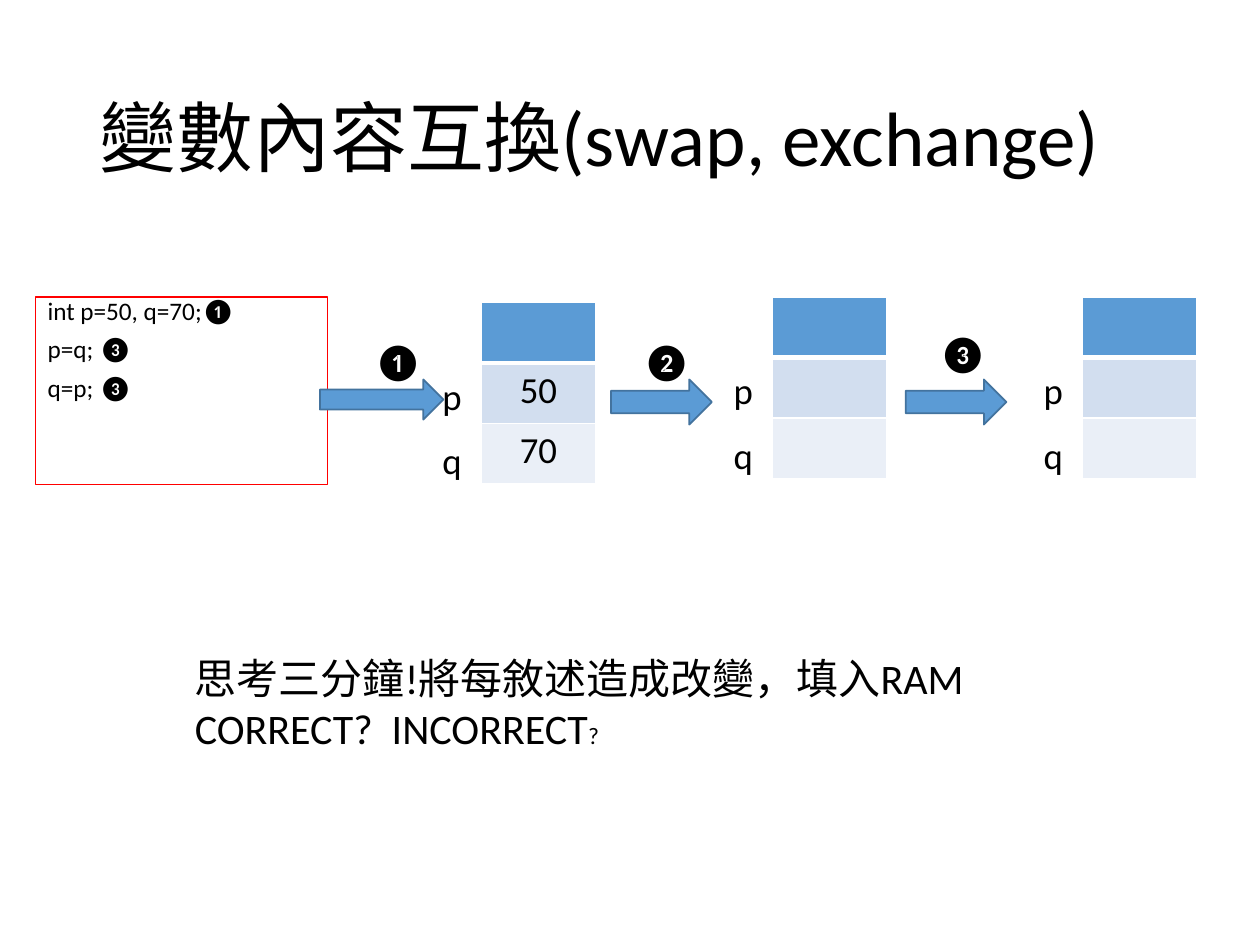
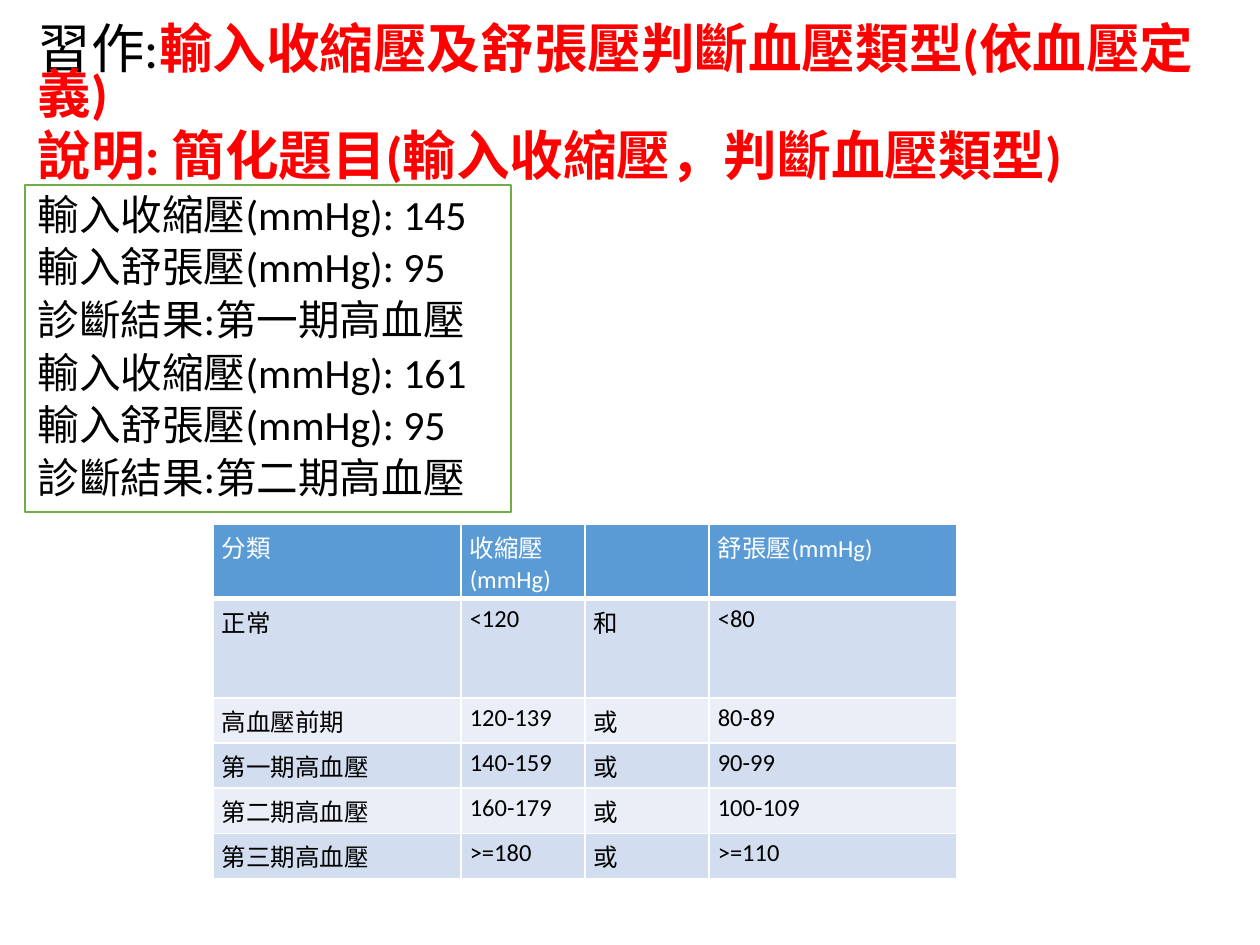
from lxml.etree import SubElement
from pptx import Presentation
from pptx.dml.color import RGBColor
from pptx.enum.shapes import MSO_SHAPE as Shape
from pptx.enum.text import MSO_ANCHOR as Anchor, PP_ALIGN as Align
from pptx.oxml.ns import qn
from pptx.util import Cm, Pt

BLACK, WHITE, RED, GREEN = "000000", "FFFFFF", "FF0000", "70AD47"
BLUE, DARK_BLUE = "5B9BD5", "43739E"
BANDS = ("D2DEEF", "EAEFF7")


def color(value):
    """Turn a hex string into a colour."""
    return RGBColor.from_string(value)


def lengths(box):
    """Turn centimetres into lengths."""
    return [Cm(value) for value in box]


class Deck:
    """Hold the shared style and the current slide."""

    font = "Calibri"

    def __init__(self):
        """Start an empty 4:3 presentation."""
        self.presentation = Presentation()
        self.presentation.slide_width = Cm(25.4)
        self.presentation.slide_height = Cm(19.05)
        self.slide = None

    def add_slide(self):
        """Add a blank slide and make it current."""
        self.slide = self.presentation.slides.add_slide(self.presentation.slide_layouts[6])

    def style(self, paragraph, size, fill=BLACK, bold=False):
        """Format every run of a paragraph."""
        for run in paragraph.runs:
            run.font.name = self.font
            run.font.size = Pt(size)
            run.font.bold = bold
            run.font.color.rgb = color(fill)

    def text(self, box, lines, size, spacing=None, before=None, anchor=Anchor.TOP):
        """Add a text box and return its paragraphs."""
        text_frame = self.slide.shapes.add_textbox(*lengths(box)).text_frame
        text_frame.word_wrap = True
        text_frame.vertical_anchor = anchor
        text_frame.text = "\n".join(lines)
        for paragraph in text_frame.paragraphs:
            paragraph.line_spacing = spacing
            paragraph.space_before = before
            self.style(paragraph, size)
        return text_frame.paragraphs

    def body(self, box, lines, size):
        """Add tightly spaced body text."""
        return self.text(box, lines, size, spacing=0.7, before=Pt(10))

    def shape(self, kind, box, line, width, fill=None):
        """Add an outlined preset shape."""
        shape = self.slide.shapes.add_shape(kind, *lengths(box))
        shape.shadow.inherit = False
        shape.line.color.rgb = color(line)
        shape.line.width = Pt(width)
        if fill:
            shape.fill.solid()
            shape.fill.fore_color.rgb = color(fill)
        else:
            shape.fill.background()

    def arrow(self, box):
        """Add a blue block arrow."""
        self.shape(Shape.RIGHT_ARROW, box, DARK_BLUE, 1, BLUE)

    def borders(self, cell, bottom):
        """Give a cell white borders."""
        properties = cell._tc.get_or_add_tcPr()
        for side, width in (("L", 1), ("R", 1), ("T", 1), ("B", bottom)):
            line = SubElement(properties, qn(f"a:ln{side}"), w=str(Pt(width)))
            SubElement(SubElement(line, qn("a:solidFill")), qn("a:srgbClr"), val=WHITE)

    def table(self, left, top, widths, heights, rows, size, align=Align.LEFT):
        """Add a banded table with a blue header row."""
        box = lengths((left, top, sum(widths), sum(heights)))
        table = self.slide.shapes.add_table(len(rows), len(widths), *box).table
        for column, width in zip(table.columns, widths):
            column.width = Cm(width)
        for index, (row, height, values) in enumerate(zip(table.rows, heights, rows)):
            row.height = Cm(height)
            for cell, value in zip(row.cells, values):
                self.borders(cell, 1 if index else 3)
                cell.fill.solid()
                cell.fill.fore_color.rgb = color(BANDS[(index - 1) % 2] if index else BLUE)
                cell.margin_left = cell.margin_right = Cm(0.18)
                cell.margin_top = cell.margin_bottom = Cm(0.1)
                cell.text = value
                paragraph = cell.text_frame.paragraphs[0]
                paragraph.alignment = align
                self.style(paragraph, size, BLACK if index else WHITE)

    def memory(self, left, top, values):
        """Add a memory table with its variable names."""
        self.table(left, top, [2.31], [1.22] * 3, [[""]] + [[value] for value in values],
                   21, Align.CENTER)
        for index, name in enumerate("pq"):
            self.text((left - 1.03, top + 1.3 * (index + 1), 0.58, 1.14), [name], 21)


def swap_slide(deck):
    """Build the variable swap slide."""
    deck.add_slide()
    deck.text((1.75, 1.02, 21.9, 3.68), ["變數內容互換(swap, exchange)"], 44,
              spacing=0.9, anchor=Anchor.MIDDLE)
    code_box = (0.71, 5.99, 5.89, 3.78)
    deck.shape(Shape.RECTANGLE, code_box, RED, 0.75)
    deck.body(code_box, ["int p=50, q=70;❶", "p=q; ❸", "q=p; ❸"], 14.4)
    deck.arrow((6.45, 7.65, 2.49, 0.81))
    for left, top, values in ((9.7, 6.1, ("50", "70")), (15.57, 5.99, ("", "")),
                              (21.82, 5.99, ("", ""))):
        deck.memory(left, top, values)
    for left in (12.32, 18.26):
        deck.arrow((left, 7.65, 2.03, 0.91))
    for step, left, top in (("❶", 7.29, 6.71), ("❷", 12.7, 6.71), ("❸", 18.67, 6.55)):
        deck.text((left, top, 1.17, 1.14), [step], 21)
    question = deck.text((3.68, 13.03, 16.15, 2.31),
                         ["思考三分鐘!將每敘述造成改變，填入RAM", "CORRECT?  INCORRECT"], 24)[1]
    mark = question.add_run()
    mark.text = "?"
    mark.font.name = deck.font
    mark.font.size = Pt(13.5)
    mark.font.color.rgb = color(BLACK)


def blood_pressure_slide(deck):
    """Build the blood pressure exercise slide."""
    deck.add_slide()
    samples = []
    for systolic, stage in ((145, "一"), (161, "二")):
        samples += [f"輸入收縮壓(mmHg): {systolic}", "輸入舒張壓(mmHg): 95",
                    f"診斷結果:第{stage}期高血壓"]
    heading, note, *_ = deck.body((0.51, 0.53, 24.41, 10.06), [
        "習作:", "說明: 簡化題目(輸入收縮壓，判斷血壓類型)", *samples], 23.8)
    heading.add_run().text = "輸入收縮壓及舒張壓判斷血壓類型(依血壓定義)"
    for paragraph in (heading, note):
        deck.style(paragraph, 30.6, RED, True)
    label = heading.runs[0].font
    label.bold = False
    label.color.rgb = color(BLACK)
    deck.table(4.29, 10.57, [5, 2.5, 2.5, 5], [1.5, 2] + [0.91] * 4, [
        ("分類", "收縮壓(mmHg)", "", "舒張壓(mmHg)"),
        ("正常", "<120", "和", "<80"),
        ("高血壓前期", "120-139", "或", "80-89"),
        ("第一期高血壓", "140-159", "或", "90-99"),
        ("第二期高血壓", "160-179", "或", "100-109"),
        ("第三期高血壓", ">=180", "或", ">=110"),
    ], 14)
    deck.shape(Shape.RECTANGLE, (0.51, 3.73, 9.8, 6.6), GREEN, 1)


def main():
    """Build and save the presentation."""
    deck = Deck()
    swap_slide(deck)
    blood_pressure_slide(deck)
    deck.presentation.save("out.pptx")


if __name__ == "__main__":
    main()
